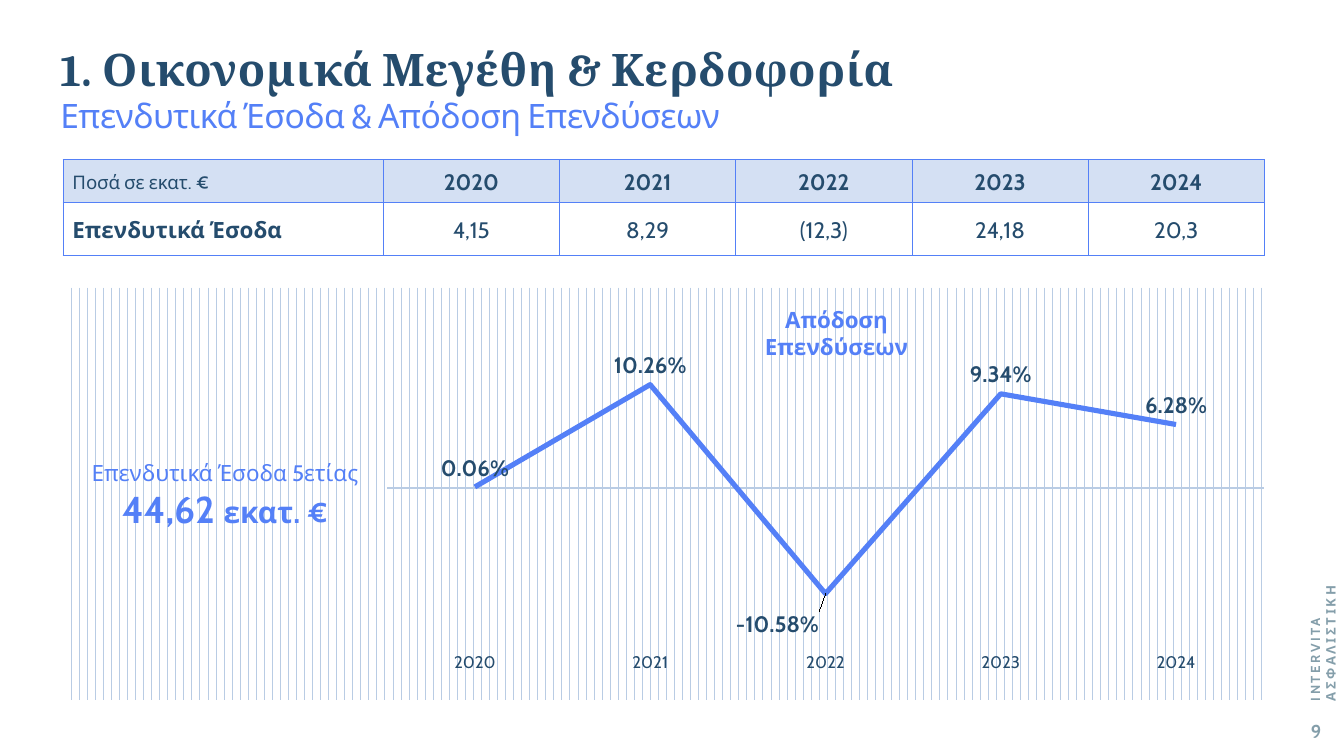
from lxml import etree
from pptx import Presentation
from pptx.chart.data import CategoryChartData
from pptx.dml.color import RGBColor
from pptx.enum.chart import XL_CHART_TYPE, XL_LABEL_POSITION, XL_TICK_LABEL_POSITION, XL_TICK_MARK
from pptx.enum.text import MSO_ANCHOR, MSO_AUTO_SIZE, PP_ALIGN
from pptx.oxml import parse_xml
from pptx.oxml.ns import qn
from pptx.util import Pt

LINE_STACKED = XL_CHART_TYPE.LINE_STACKED
ABOVE, BELOW = XL_LABEL_POSITION.ABOVE, XL_LABEL_POSITION.BELOW
LOW = XL_TICK_LABEL_POSITION.LOW
NO_TICK = XL_TICK_MARK.NONE
LEFT, CENTER, RIGHT = PP_ALIGN.LEFT, PP_ALIGN.CENTER, PP_ALIGN.RIGHT
TOP, MIDDLE = MSO_ANCHOR.TOP, MSO_ANCHOR.MIDDLE
NO_AUTOFIT = MSO_AUTO_SIZE.NONE

NAVY, BLUE, GREY = "254C6D", "5480F7", "849EAA"
HEADER_FILL, WHITE, PALE_BLUE = "D4E0F3", "FFFFFF", "B9CCE4"
BODY_FONT, TITLE_FONT = "Cabin", "Cambria"
CONTENT_LEFT, CONTENT_WIDTH = 33.8, 643.7

YEARS = ["2020", "2021", "2022", "2023", "2024"]
INCOME = ["4,15", "8,29", "(12,3)", "24,18", "20,3"]
RETURNS = [0.0006, 0.1026, -0.1058, 0.0934, 0.0628]
NS = ('xmlns:a="http://schemas.openxmlformats.org/drawingml/2006/main" '
      'xmlns:c="http://schemas.openxmlformats.org/drawingml/2006/chart"')


def rgb(color):
    return RGBColor.from_string(color)


def style_font(font, size, color, bold=False, name=BODY_FONT):
    font.name, font.size, font.bold = name, Pt(size), bold
    font.color.rgb = rgb(color)


def add_run(paragraph, text, size, color, bold=False, name=BODY_FONT, spacing=0):
    """Add one run; spacing is the letter spacing in points."""
    run = paragraph.add_run()
    run.text = text
    style_font(run.font, size, color, bold, name)
    if spacing:
        run.font._element.set("spc", str(round(spacing * 100)))


def set_frame(frame, inset_x=7.2, inset_y=7.2):
    frame.word_wrap = True
    frame.auto_size = NO_AUTOFIT
    frame.vertical_anchor = TOP
    frame.margin_left = frame.margin_right = Pt(inset_x)
    frame.margin_top = frame.margin_bottom = Pt(inset_y)


def add_title(slide):
    title = slide.shapes.title
    title.left, title.top, title.width, title.height = Pt(25.2), Pt(15.1), Pt(481.7), Pt(51.1)
    set_frame(title.text_frame)
    heading = title.text_frame.paragraphs[0]
    heading.alignment = LEFT
    add_run(heading, "1. Οικονομικά Μεγέθη & Κερδοφορία", 24, NAVY, True, TITLE_FONT, 0.2)
    heading.add_line_break()
    add_run(heading, "Επενδυτικά Έσοδα & Απόδοση Επενδύσεων", 18, BLUE, spacing=-0.3)


def add_text(slide, left, top, width, height, lines, align=LEFT):
    """Add a text box; each line is a list of add_run argument tuples."""
    box = slide.shapes.add_textbox(Pt(left), Pt(top), Pt(width), Pt(height))
    frame = box.text_frame
    set_frame(frame, inset_y=3.6)
    for index, runs in enumerate(lines):
        paragraph = frame.add_paragraph() if index else frame.paragraphs[0]
        paragraph.alignment = align
        for run in runs:
            add_run(paragraph, *run)
    return box


def set_borders(cell, color, width):
    properties = cell._tc.get_or_add_tcPr()
    for position, side in enumerate(("lnL", "lnR", "lnT", "lnB")):
        properties.insert(position, parse_xml(
            f'<a:{side} {NS} w="{Pt(width)}"><a:solidFill><a:srgbClr val="{color}"/>'
            f'</a:solidFill></a:{side}>'))


def fill_cell(cell, text, size, bold, align, fill):
    cell.fill.solid()
    cell.fill.fore_color.rgb = rgb(fill)
    cell.vertical_anchor = MIDDLE
    cell.margin_left = cell.margin_right = Pt(5)
    cell.margin_top = cell.margin_bottom = 0
    paragraph = cell.text_frame.paragraphs[0]
    paragraph.alignment = align
    paragraph.line_spacing = 1.15
    add_run(paragraph, text, size, NAVY, bold)
    set_borders(cell, BLUE, 0.5)


def add_income_table(slide):
    label_width, year_width = 171.6, 94.4
    table = slide.shapes.add_table(2, len(YEARS) + 1, Pt(CONTENT_LEFT), Pt(85.5),
                                   Pt(CONTENT_WIDTH), Pt(51.1)).table
    for index, column in enumerate(table.columns):
        column.width = Pt(year_width if index else label_width)
    table.rows[0].height, table.rows[1].height = Pt(22.8), Pt(28.3)
    fill_cell(table.cell(0, 0), "Ποσά σε εκατ. €", 10, False, LEFT, HEADER_FILL)
    fill_cell(table.cell(1, 0), "Επενδυτικά Έσοδα", 12, True, LEFT, WHITE)
    for column, (year, income) in enumerate(zip(YEARS, INCOME), start=1):
        fill_cell(table.cell(0, column), year, 12, True, CENTER, HEADER_FILL)
        fill_cell(table.cell(1, column), income, 12, False, CENTER, WHITE)


def manual_layout(x, y, extent=""):
    return parse_xml(f'<c:layout {NS}><c:manualLayout>{extent and extent[0]}'
                     f'<c:x val="{x}"/><c:y val="{y}"/>{extent and extent[1]}'
                     '</c:manualLayout></c:layout>')


def set_plot_area(chart, x, y, width, height):
    plot_area = chart._chartSpace.chart.plotArea
    for layout in plot_area.findall(qn("c:layout")):
        plot_area.remove(layout)
    edges = ('<c:layoutTarget val="inner"/><c:xMode val="edge"/><c:yMode val="edge"/>',
             f'<c:w val="{width}"/><c:h val="{height}"/>')
    plot_area.insert(0, manual_layout(x, y, edges))


def set_striped_background(chart):
    chart._chartSpace.chart.addnext(parse_xml(
        f'<c:spPr {NS}><a:pattFill prst="dashVert"><a:fgClr><a:srgbClr val="{PALE_BLUE}"/>'
        f'</a:fgClr><a:bgClr><a:srgbClr val="{WHITE}"/></a:bgClr></a:pattFill>'
        '<a:ln><a:noFill/></a:ln></c:spPr>'))


def style_axes(chart):
    years = chart.category_axis
    years.tick_label_position = LOW
    years.major_tick_mark = years.minor_tick_mark = NO_TICK
    years.has_major_gridlines = False
    years.format.line.color.rgb = rgb(PALE_BLUE)
    years.format.line.width = Pt(1)
    style_font(years.tick_labels.font, 9, NAVY)
    returns = chart.value_axis
    returns.visible = False
    returns.has_major_gridlines = False
    returns.minimum_scale, returns.maximum_scale = -0.15, 0.15


def style_returns(series):
    series.smooth = False
    series.format.line.color.rgb = rgb(BLUE)
    series.format.line.width = Pt(2.75)
    labels = series.data_labels
    labels.show_value = True
    labels.position = ABOVE
    labels.number_format, labels.number_format_is_linked = "0.00%", False
    style_font(labels.font, 12, NAVY, True)
    lowest = series.points[RETURNS.index(min(RETURNS))].data_label
    style_font(lowest.font, 12, NAVY, True)
    lowest.position = BELOW
    label_index = labels._element.find(f"{qn('c:dLbl')}/{qn('c:idx')}")
    label_index.addnext(manual_layout(-0.04, 0.03))


def add_returns_chart(slide):
    data = CategoryChartData(number_format="0.00%")
    data.categories = YEARS
    data.add_series("Απόδοση Επενδύσεων", RETURNS)
    chart = slide.shapes.add_chart(LINE_STACKED, Pt(CONTENT_LEFT), Pt(154.1),
                                   Pt(CONTENT_WIDTH), Pt(221), data).chart
    chart.has_title = chart.has_legend = False
    style_font(chart.font, 9, NAVY)
    chart.plots[0].vary_by_categories = False
    set_striped_background(chart)
    set_plot_area(chart, 0.27, 0.12, 0.73, 0.73)
    style_axes(chart)
    style_returns(chart.plots[0].series[0])


def main():
    deck = Presentation()
    deck.slide_width, deck.slide_height = Pt(720), Pt(405)
    slide = deck.slides.add_slide(deck.slide_layouts[5])
    add_title(slide)
    add_income_table(slide)
    add_text(slide, 677.5, 382.3, 37.4, 19.4, [[("9", 10, GREY, True)]], RIGHT)
    company = add_text(slide, 643, 313.2, 123.1, 15.8,
                       [[(name, 7, GREY, True, BODY_FONT, 1.4)]
                        for name in ("INTERVITA", "ΑΣΦΑΛΙΣΤΙΚΗ")])
    company.rotation = 270
    add_returns_chart(slide)
    add_text(slide, CONTENT_LEFT, 242.6, 173.5, 46.1,
             [[("Επενδυτικά Έσοδα 5ετίας", 12, BLUE)],
              [("44,62 ", 20, BLUE, True), ("εκατ. €", 16, BLUE, True)]], CENTER)
    add_text(slide, 377.3, 160.6, 141.8, 21.6,
             [[("Απόδοση Επενδύσεων", 12, BLUE, True)]], CENTER)
    deck.save("out.pptx")


if __name__ == "__main__":
    main()
